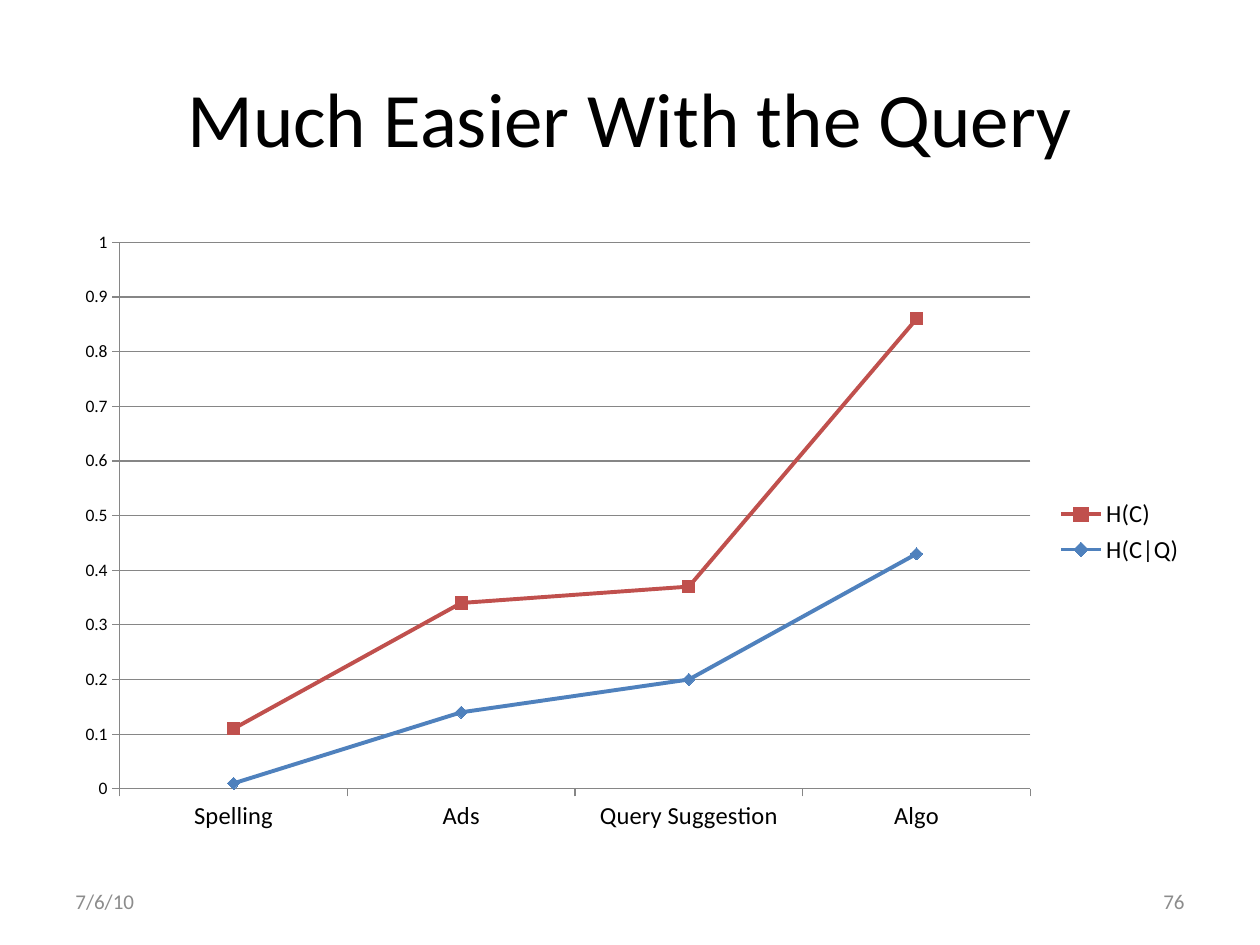
"""Build a slide with a line chart of search entropy with and without the query."""
from dataclasses import dataclass

from pptx import Presentation
from pptx.chart.data import CategoryChartData
from pptx.dml.color import RGBColor
from pptx.enum.chart import XL_CHART_TYPE, XL_LEGEND_POSITION, XL_MARKER_STYLE, XL_TICK_MARK
from pptx.enum.text import MSO_ANCHOR, PP_ALIGN
from pptx.util import Pt

SIZE = (1260, 945)
TITLE_BOX = (63, 38, 1134, 157)
CHART_BOX = (63, 220, 1134, 624)
DATE_BOX = (63, 876, 294, 50)
NUMBER_BOX = (903, 876, 294, 50)


@dataclass(frozen=True)
class Theme:
    font: str = "Calibri"
    ink: str = "000000"
    muted: str = "8C8C8C"
    grid: str = "868686"
    red: str = "C0504D"
    blue: str = "4F81BD"
    title: int = 44
    label: int = 14
    footer: int = 12
    tick: int = 10


THEME = Theme()

TEXTS = [
    ("Much Easier With the Query", TITLE_BOX, THEME.title, THEME.ink, PP_ALIGN.CENTER),
    ("7/6/10", DATE_BOX, THEME.footer, THEME.muted, PP_ALIGN.LEFT),
    ("76", NUMBER_BOX, THEME.footer, THEME.muted, PP_ALIGN.RIGHT),
]
CATEGORIES = ["Spelling", "Ads", "Query Suggestion", "Algo"]
SERIES = [
    ("H(C)", [0.11, 0.34, 0.37, 0.86], THEME.red, XL_MARKER_STYLE.SQUARE, 7),
    ("H(C|Q)", [0.01, 0.14, 0.2, 0.43], THEME.blue, XL_MARKER_STYLE.DIAMOND, 7),
]


def px(n):
    return round(n * 914400 / 126)


def set_font(font, size, color):
    font.name = THEME.font
    font.size = Pt(size)
    font.color.rgb = RGBColor.from_string(color)


def set_line(line, color, width):
    line.color.rgb = RGBColor.from_string(color)
    line.width = Pt(width)


def add_text(s, text, box, size, color, align):
    tf = s.shapes.add_textbox(*map(px, box)).text_frame
    tf.word_wrap = True
    tf.vertical_anchor = MSO_ANCHOR.MIDDLE
    p = tf.paragraphs[0]
    p.text = text
    p.alignment = align
    set_font(p.font, size, color)


def add_line_chart(s):
    data = CategoryChartData()
    data.categories = CATEGORIES
    for name, values, *_ in SERIES:
        data.add_series(name, values)
    chart = s.shapes.add_chart(XL_CHART_TYPE.LINE_MARKERS, *map(px, CHART_BOX), data).chart
    set_font(chart.font, THEME.tick, THEME.ink)
    chart.has_title = False
    chart.has_legend = True
    chart.legend.position = XL_LEGEND_POSITION.RIGHT
    chart.legend.include_in_layout = False
    set_font(chart.legend.font, THEME.label, THEME.ink)

    axes = [(chart.category_axis, THEME.label), (chart.value_axis, THEME.tick)]
    for axis, size in axes:
        axis.major_tick_mark = XL_TICK_MARK.OUTSIDE
        axis.minor_tick_mark = XL_TICK_MARK.NONE
        set_line(axis.format.line, THEME.grid, 0.75)
        set_font(axis.tick_labels.font, size, THEME.ink)
    value_axis = chart.value_axis
    value_axis.minimum_scale, value_axis.maximum_scale = 0, 1
    value_axis.major_unit = 0.1
    value_axis.has_major_gridlines = True
    set_line(value_axis.major_gridlines.format.line, THEME.grid, 0.75)

    plot = chart.plots[0]
    plot.vary_by_categories = False
    for series, (_, _, color, style, size) in zip(plot.series, SERIES):
        series.smooth = False
        set_line(series.format.line, color, 2.25)
        marker = series.marker
        marker.style, marker.size = style, size
        marker.format.fill.solid()
        marker.format.fill.fore_color.rgb = RGBColor.from_string(color)
        set_line(marker.format.line, color, 0.75)


def main():
    prs = Presentation()
    prs.slide_width, prs.slide_height = map(px, SIZE)
    s = prs.slides.add_slide(prs.slide_layouts[6])
    for item in TEXTS:
        add_text(s, *item)
    add_line_chart(s)
    prs.save("out.pptx")


if __name__ == "__main__":
    main()
